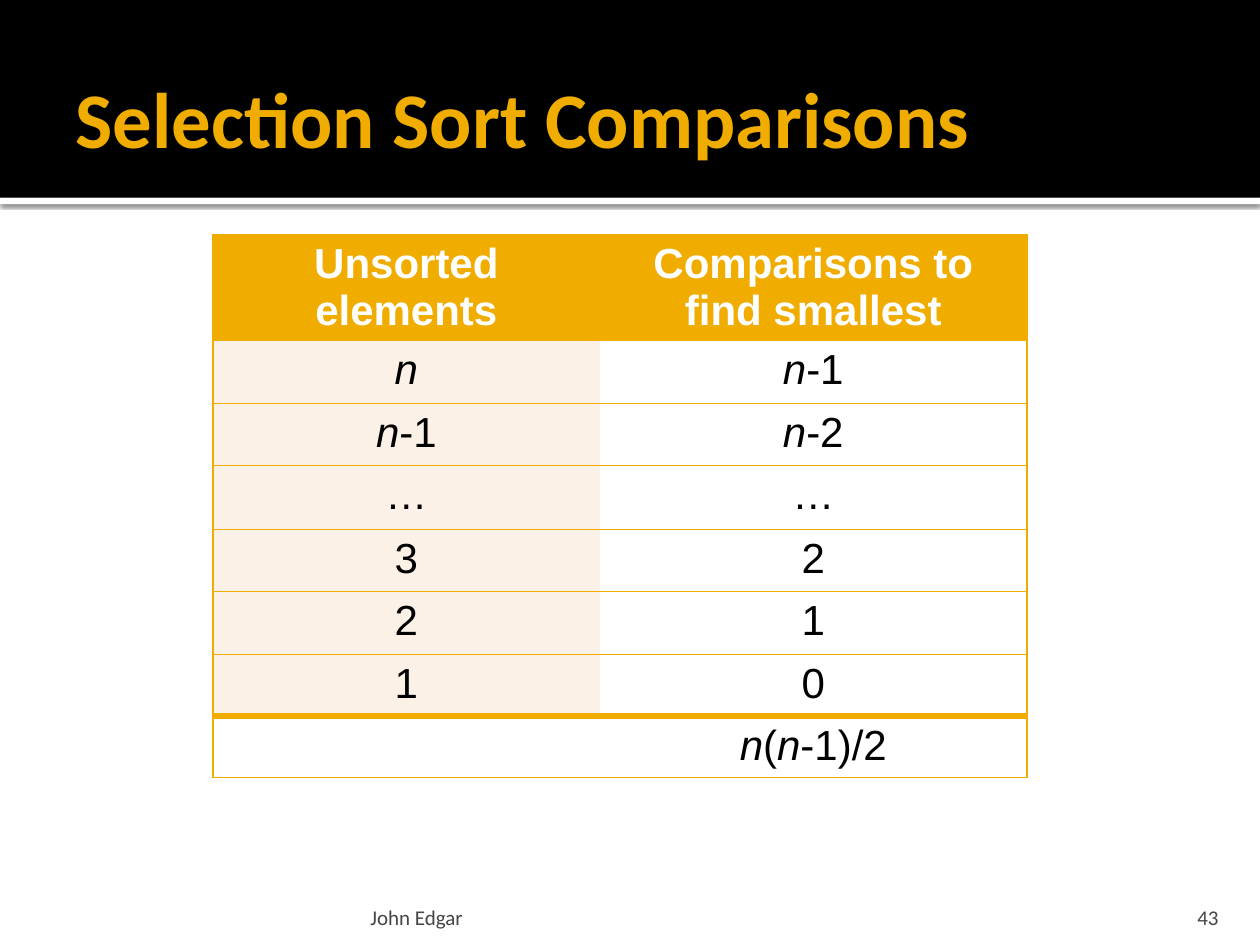
from lxml import etree
from pptx import Presentation
from pptx.dml.color import RGBColor
from pptx.enum.shapes import MSO_SHAPE
from pptx.enum.text import MSO_ANCHOR, PP_ALIGN
from pptx.oxml import parse_xml
from pptx.oxml.ns import nsdecls, qn
from pptx.util import Inches, Pt

RECT = MSO_SHAPE.RECTANGLE
MIDDLE, BOTTOM = MSO_ANCHOR.MIDDLE, MSO_ANCHOR.BOTTOM
LEFT, CENTER, RIGHT = PP_ALIGN.LEFT, PP_ALIGN.CENTER, PP_ALIGN.RIGHT

GOLD, CREAM, WHITE, BLACK, GRAY = "F0AD00", "FCF1E7", "FFFFFF", "000000", "454545"
COLS = [3.07, 3.39]
HEIGHTS = [0.84, 0.5, 0.49, 0.51, 0.49, 0.5, 0.49, 0.49]
ROWS = [
    ("Unsorted elements", "Comparisons to find smallest"),
    ("n", "n-1"),
    ("n-1", "n-2"),
    ("…", "…"),
    ("3", "2"),
    ("2", "1"),
    ("1", "0"),
    ("", "n(n-1)/2"),
]


def color(code):
    return RGBColor.from_string(code)


def add_run(para, text, font, size, code, bold=False, italic=False):
    run = para.add_run()
    run.text = text
    run.font.name = font
    run.font.size = Pt(size)
    run.font.bold = bold
    run.font.italic = italic
    run.font.color.rgb = color(code)


def set_frame(frame, anchor, left, top, right, bottom):
    frame.word_wrap = True
    frame.vertical_anchor = anchor
    frame.margin_left, frame.margin_top = Inches(left), Inches(top)
    frame.margin_right, frame.margin_bottom = Inches(right), Inches(bottom)


def add_bar(slide, box, code):
    bar = slide.shapes.add_shape(RECT, *map(Inches, box))
    bar.shadow.inherit = False
    bar.fill.solid()
    bar.fill.fore_color.rgb = color(code)
    bar.line.fill.background()
    return bar


def add_shadow(bar):
    effects = bar.element.spPr.find(qn("a:effectLst"))
    effects.append(parse_xml(
        f'<a:outerShdw {nsdecls("a")} blurRad="{Pt(2.5)}" dist="{Pt(0.8)}" '
        f'dir="5400000" algn="tl" rotWithShape="0"><a:srgbClr val="{BLACK}">'
        '<a:alpha val="60000"/></a:srgbClr></a:outerShdw>'))


def add_header(slide, box):
    left, top, width, height = box
    add_shadow(add_bar(slide, (left, top + height, width, 0.05), WHITE))
    add_bar(slide, box, BLACK)
    title = slide.shapes.title
    title.element.getparent().append(title.element)
    title.left, title.top = Inches(left + 0.5), Inches(top + 0.3)
    title.width, title.height = Inches(width - 1), Inches(1.25)
    set_frame(title.text_frame, MIDDLE, 0.1, 0.05, 0.05, 0.05)
    para = title.text_frame.paragraphs[0]
    para.alignment = LEFT
    add_run(para, "Selection Sort Comparisons", "Calibri", 45, GOLD, bold=True)


def set_edge(cell, side, width):
    props = cell._tc.get_or_add_tcPr()
    line = etree.SubElement(props, qn(f"a:ln{side}"), w=str(Pt(width)))
    if width:
        fill = etree.SubElement(line, qn("a:solidFill"))
        etree.SubElement(fill, qn("a:srgbClr"), val=GOLD)
    else:
        etree.SubElement(line, qn("a:noFill"))


def fill_cell(cell, text, row, col):
    last = len(ROWS) - 1
    edges = {
        "L": 1 if col == 0 else 0,
        "R": 1 if col == 1 else 0,
        "T": 4 if row == last else 1,
        "B": 4 if row == last - 1 else 1,
    }
    for side, width in edges.items():
        set_edge(cell, side, width)
    back = GOLD if row == 0 else CREAM if col == 0 and row < last else WHITE
    cell.fill.solid()
    cell.fill.fore_color.rgb = color(back)
    para = cell.text_frame.paragraphs[0]
    para.alignment = CENTER
    if row == 0:
        add_run(para, text, "Arial", 24, WHITE, bold=True)
        return
    for part in text.replace("n", "|n|").split("|"):
        if part:
            add_run(para, part, "Arial", 24, BLACK, italic=part == "n")


def add_grid(slide, box):
    frame = slide.shapes.add_table(len(ROWS), len(COLS), *map(Inches, box))
    table = frame.table
    table.horz_banding = False
    for column, width in zip(table.columns, COLS):
        column.width = Inches(width)
    for row, (height, texts) in enumerate(zip(HEIGHTS, ROWS)):
        table.rows[row].height = Inches(height)
        for col, text in enumerate(texts):
            fill_cell(table.cell(row, col), text, row, col)


def add_note(slide, box, text, align, inset):
    frame = slide.shapes.add_textbox(*map(Inches, box)).text_frame
    set_frame(frame, BOTTOM, inset, 0.05, inset, 0)
    para = frame.paragraphs[0]
    para.alignment = align
    add_run(para, text, "Calibri", 12, GRAY)


def main():
    deck = Presentation()
    deck.slide_width, deck.slide_height = Inches(10), Inches(7.5)
    slide = deck.slides.add_slide(deck.slide_layouts[5])
    add_header(slide, (0, 0, 10, 1.57))
    add_grid(slide, (1.69, 1.86, sum(COLS), sum(HEIGHTS)))
    add_note(slide, (2.89, 7.08, 6.02, 0.3), "John Edgar", LEFT, 0.05)
    add_note(slide, (8.97, 7.08, 0.8, 0.3), "43", RIGHT, 0.1)
    deck.save("out.pptx")


if __name__ == "__main__":
    main()
